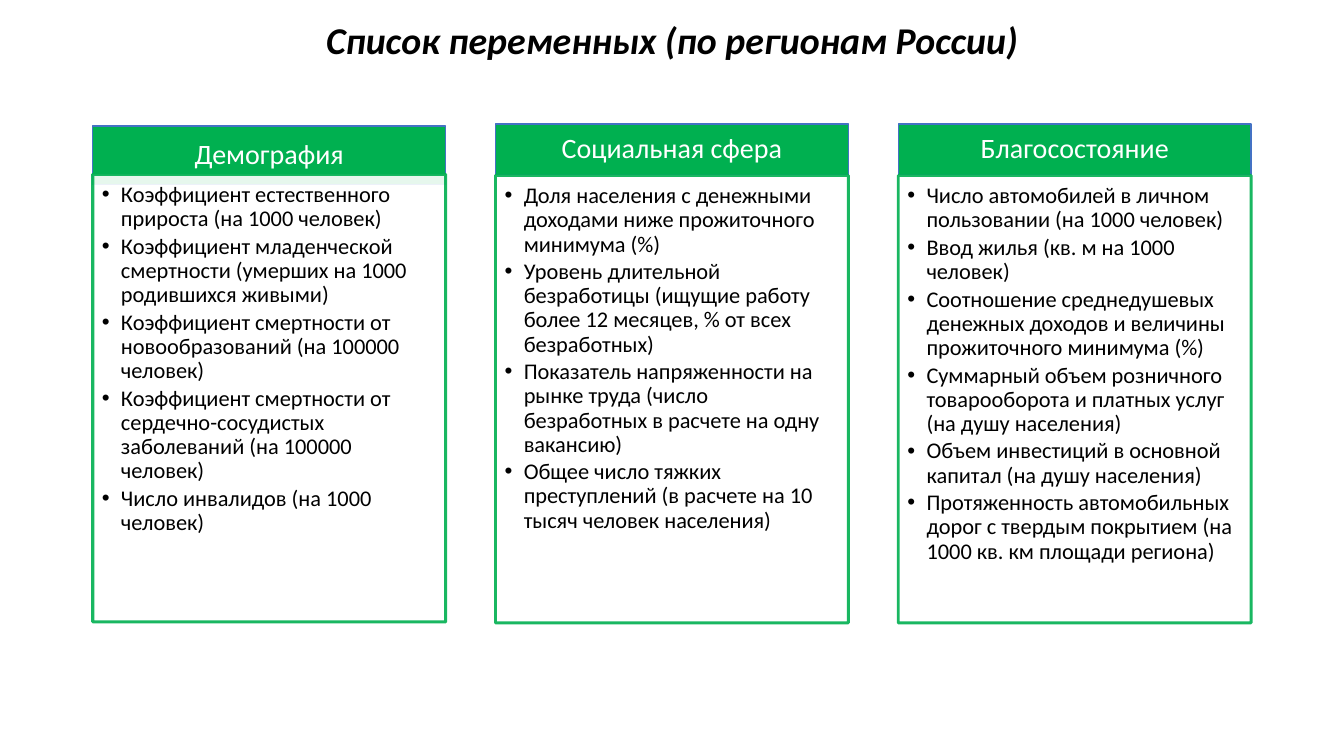
from dataclasses import dataclass

from lxml.etree import SubElement
from pptx import Presentation
from pptx.dml.color import RGBColor
from pptx.enum.shapes import MSO_SHAPE
from pptx.enum.text import MSO_ANCHOR, MSO_AUTO_SIZE, PP_ALIGN
from pptx.oxml.ns import qn
from pptx.shapes.autoshape import Shape
from pptx.slide import Slide
from pptx.text.text import TextFrame
from pptx.util import Inches, Pt

FONT = "Calibri"
BLACK, WHITE, GREEN, BLUE = "000000", "FFFFFF", "00B050", "4472C4"
SLIDE_WIDTH, SLIDE_HEIGHT = 13.33, 7.5
GRID_LEFT, GRID_WIDTH = 0.92, 11.49
COLUMN_WIDTH = 3.5
BODY_HEIGHT = 4.44
INDENT = 0.19


@dataclass(frozen=True)
class VariableGroup:
    """A heading and the variables listed under it."""

    heading: str
    variables: tuple[str, ...]
    heading_top: float = 1.23
    heading_height: float = 0.5
    body_top: float = 1.74
    border: float = 2


GROUPS = (
    VariableGroup(
        "Демография",
        (
            "Коэффициент естественного прироста (на 1000 человек)",
            "Коэффициент младенческой смертности (умерших на 1000 родившихся живыми)",
            "Коэффициент смертности от новообразований (на 100000 человек)",
            "Коэффициент смертности от сердечно-сосудистых заболеваний (на 100000 человек)",
            "Число инвалидов (на 1000 человек)",
        ),
        heading_top=1.25,
        heading_height=0.58,
        body_top=1.73,
        border=2.25,
    ),
    VariableGroup(
        "Социальная сфера",
        (
            "Доля населения с денежными доходами ниже прожиточного минимума (%)",
            "Уровень длительной безработицы (ищущие работу более 12 месяцев, % от всех безработных)",
            "Показатель напряженности на рынке труда (число безработных в расчете на одну вакансию)",
            "Общее число тяжких преступлений (в расчете на 10 тысяч человек населения)",
        ),
    ),
    VariableGroup(
        "Благосостояние",
        (
            "Число автомобилей в личном пользовании (на 1000 человек)",
            "Ввод жилья (кв. м на 1000 человек)",
            "Соотношение среднедушевых денежных доходов и величины прожиточного минимума (%)",
            "Суммарный объем розничного товарооборота и платных услуг (на душу населения)",
            "Объем инвестиций в основной капитал (на душу населения)",
            "Протяженность автомобильных дорог с твердым покрытием (на 1000 кв. км площади региона)",
        ),
    ),
)


def color(value: str) -> RGBColor:
    """Turn a hex string into a colour."""
    return RGBColor.from_string(value)


def set_insets(frame: TextFrame, left: float, top: float, right: float, bottom: float) -> None:
    """Set the text margins in inches."""
    frame.margin_left, frame.margin_top = Inches(left), Inches(top)
    frame.margin_right, frame.margin_bottom = Inches(right), Inches(bottom)


def format_text(frame: TextFrame, size: float, ink: str, align: PP_ALIGN) -> None:
    """Format every paragraph and run of a frame."""
    frame.word_wrap = True
    for para in frame.paragraphs:
        para.alignment = align
        para.line_spacing = 0.9
        for span in para.runs:
            span.font.name = FONT
            span.font.size = Pt(size)
            span.font.color.rgb = color(ink)


def add_box(slide: Slide, left: float, top: float, height: float,
            fill: str, line: str, border: float) -> Shape:
    """Draw a rectangle one column wide."""
    box = slide.shapes.add_shape(
        MSO_SHAPE.RECTANGLE, Inches(left), Inches(top), Inches(COLUMN_WIDTH), Inches(height)
    )
    box.shadow.inherit = False
    box.fill.solid()
    box.fill.fore_color.rgb = color(fill)
    box.line.color.rgb = color(line)
    box.line.width = Pt(border)
    return box


def set_opacity(box: Shape, percent: int) -> None:
    """Make the fill and the outline partly transparent."""
    for tint in box._element.spPr.iter(qn("a:srgbClr")):
        SubElement(tint, qn("a:alpha"), val=str(percent * 1000))


def add_bullets(frame: TextFrame) -> None:
    """Give every paragraph a bullet with a hanging indent."""
    for para in frame.paragraphs:
        para.level = 1
        para.space_after = Pt(2.4)
        properties = para._p.get_or_add_pPr()
        properties.set("marL", str(Inches(INDENT)))
        properties.set("indent", str(-Inches(INDENT)))
        SubElement(properties, qn("a:buFont"), typeface="Arial")
        SubElement(properties, qn("a:buChar"), char="•")


def add_group(slide: Slide, group: VariableGroup, left: float) -> None:
    """Draw one column with its heading and list."""
    heading = add_box(slide, left, group.heading_top, group.heading_height, GREEN, BLUE, 1)
    heading.text_frame.text = group.heading
    heading.text_frame.vertical_anchor = MSO_ANCHOR.MIDDLE
    set_insets(heading.text_frame, 0.16, 0.09, 0.16, 0.09)
    format_text(heading.text_frame, 20, WHITE, PP_ALIGN.CENTER)

    body = add_box(slide, left, group.body_top, BODY_HEIGHT, WHITE, GREEN, group.border)
    set_opacity(body, 90)
    body.text_frame.text = "\n".join(group.variables)
    body.text_frame.vertical_anchor = MSO_ANCHOR.TOP
    set_insets(body.text_frame, 0.09, 0.09, 0.12, 0.14)
    format_text(body.text_frame, 16, BLACK, PP_ALIGN.LEFT)
    add_bullets(body.text_frame)


def add_title(slide: Slide, text: str) -> None:
    """Place and format the slide title."""
    title = slide.shapes.title
    title.left, title.top = Inches(GRID_LEFT), Inches(0.18)
    title.width, title.height = Inches(GRID_WIDTH), Inches(0.47)
    frame = title.text_frame
    frame.text = text
    frame.auto_size = MSO_AUTO_SIZE.NONE
    frame.vertical_anchor = MSO_ANCHOR.MIDDLE
    format_text(frame, 27, BLACK, PP_ALIGN.CENTER)
    font = frame.paragraphs[0].runs[0].font
    font.bold = font.italic = True


def main() -> None:
    """Build and save the deck."""
    deck = Presentation()
    deck.slide_width, deck.slide_height = Inches(SLIDE_WIDTH), Inches(SLIDE_HEIGHT)
    slide = deck.slides.add_slide(deck.slide_layouts[5])
    add_title(slide, "Список переменных (по регионам России)")
    pitch = (GRID_WIDTH - COLUMN_WIDTH) / (len(GROUPS) - 1)
    for column, group in enumerate(GROUPS):
        add_group(slide, group, GRID_LEFT + column * pitch)
    deck.save("out.pptx")


if __name__ == "__main__":
    main()
